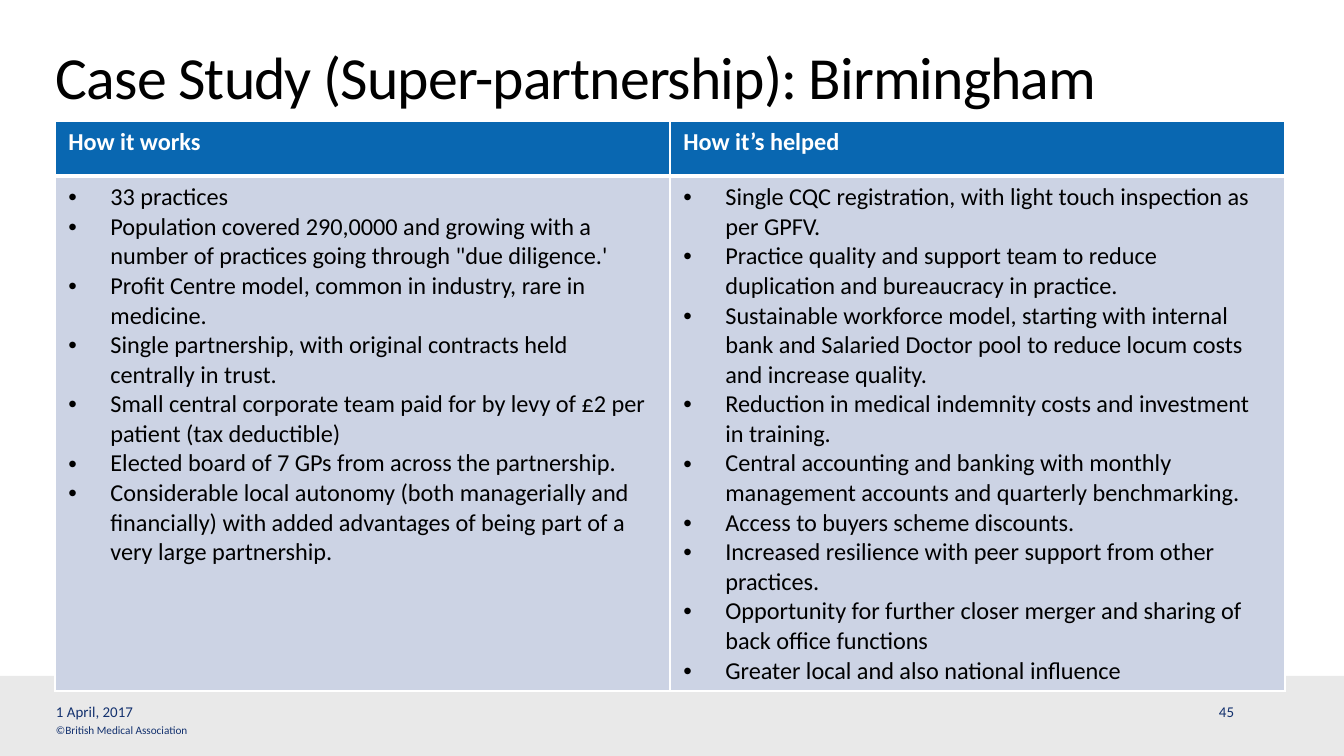
import pptx
import pptx.util
import pptx.dml.color
import pptx.enum.shapes
import pptx.enum.text
import pptx.oxml
import pptx.oxml.ns
from dataclasses import dataclass


@dataclass(frozen=True)
class Theme:
    font: str = "Calibri"
    ink: str = "000000"
    white: str = "FFFFFF"
    navy: str = "13316E"
    header: str = "0967B1"
    body: str = "CCD3E4"
    band: str = "E9E9E9"
    title_size: int = 32
    title_line: int = 34
    table_size: int = 13
    footer_size: int = 8
    copyright_size: int = 6
    thin: int = 1
    thick: int = 3


THEME = Theme()
EMU_PER_PX = 914400 / 134.4
SLIDE_WIDTH, SLIDE_HEIGHT = 1344, 756
BAND_TOP = 676
TABLE_LEFT, TABLE_TOP = 55, 121
COLUMN_WIDTH = 615
ROW_HEIGHTS = (55, 515)
BULLET_INDENT = 42

TITLE = "Case Study (Super-partnership): Birmingham"
TITLE_BOX = (56, 48, 1163, 73)
FOOTERS = [
    ("©British Medical Association", (56, 723, 278, 14), THEME.copyright_size),
    ("1 April, 2017", (56, 703, 426, 18), THEME.footer_size),
    ("45", (1219, 703, 38, 18), THEME.footer_size),
]
COLUMNS = [
    ("How it works", [
        "33 practices",
        "Population covered 290,0000 and growing with a number of practices going through \"due diligence.'",
        "Profit Centre model, common in industry, rare in medicine.",
        "Single partnership, with original contracts held centrally in trust.",
        "Small central corporate team paid for by levy of £2 per patient (tax deductible)",
        "Elected board of 7 GPs from across the partnership.",
        "Considerable local autonomy (both managerially and financially) with added advantages of being part of a very large partnership.",
    ]),
    ("How it’s helped", [
        "Single CQC registration, with light touch inspection as per GPFV.",
        "Practice quality and support team to reduce duplication and bureaucracy in practice.",
        "Sustainable workforce model, starting with internal bank and Salaried Doctor pool to reduce locum costs and increase quality.",
        "Reduction in medical indemnity costs and investment in training.",
        "Central accounting and banking with monthly management accounts and quarterly benchmarking.",
        "Access to buyers scheme discounts.",
        "Increased resilience with peer support from other practices.",
        "Opportunity for further closer merger and sharing of back office functions",
        "Greater local and also national influence",
    ]),
]


def px(value):
    return pptx.util.Emu(round(value * EMU_PER_PX))


def color(value):
    return pptx.dml.color.RGBColor.from_string(value)


def xml(tag, content="", **attributes):
    listed = "".join(f' {name}="{value}"' for name, value in attributes.items())
    namespace = pptx.oxml.ns.nsdecls("a")
    return pptx.oxml.parse_xml(f"<a:{tag} {namespace}{listed}>{content}</a:{tag}>")


def style(paragraph, size, ink, bold=False):
    for run in paragraph.runs:
        run.font.name = THEME.font
        run.font.size = pptx.util.Pt(size)
        run.font.color.rgb = color(ink)
        run.font.bold = bold


def add_text(slide, text, box, size, ink, anchor):
    text_frame = slide.shapes.add_textbox(*map(px, box)).text_frame
    text_frame.word_wrap = True
    text_frame.vertical_anchor = anchor
    text_frame.margin_left = text_frame.margin_right = 0
    text_frame.margin_top = text_frame.margin_bottom = 0
    text_frame.text = text
    paragraph = text_frame.paragraphs[0]
    style(paragraph, size, ink)
    return paragraph


def add_bullet(paragraph):
    properties = paragraph._p.get_or_add_pPr()
    properties.set("marL", str(px(BULLET_INDENT)))
    properties.set("indent", str(-px(BULLET_INDENT)))
    properties.append(xml("buFont", typeface="Arial"))
    properties.append(xml("buChar", char="•"))


def format_cell(cell, fill, top, bottom):
    cell.fill.solid()
    cell.fill.fore_color.rgb = color(fill)
    properties = cell._tc.get_or_add_tcPr()
    line_fill = f'<a:solidFill><a:srgbClr val="{THEME.white}"/></a:solidFill>'
    widths = {"lnL": THEME.thin, "lnR": THEME.thin, "lnT": top, "lnB": bottom}
    for position, (tag, width) in enumerate(widths.items()):
        properties.insert(position, xml(tag, line_fill, w=pptx.util.Pt(width)))


def add_table(slide):
    table = slide.shapes.add_table(
        len(ROW_HEIGHTS), len(COLUMNS), px(TABLE_LEFT), px(TABLE_TOP),
        px(COLUMN_WIDTH * len(COLUMNS)), px(sum(ROW_HEIGHTS)),
    ).table
    for row, height in zip(table.rows, ROW_HEIGHTS):
        row.height = px(height)
    for index, (heading, points) in enumerate(COLUMNS):
        table.columns[index].width = px(COLUMN_WIDTH)
        header, body = table.cell(0, index), table.cell(1, index)
        header.text_frame.text = heading
        style(header.text_frame.paragraphs[0], THEME.table_size, THEME.white, True)
        format_cell(header, THEME.header, THEME.thin, THEME.thick)
        body.text_frame.text = "\n".join(points)
        for paragraph in body.text_frame.paragraphs:
            add_bullet(paragraph)
            style(paragraph, THEME.table_size, THEME.ink)
        format_cell(body, THEME.body, THEME.thick, THEME.thin)


def main():
    presentation = pptx.Presentation()
    presentation.slide_width = px(SLIDE_WIDTH)
    presentation.slide_height = px(SLIDE_HEIGHT)
    slide = presentation.slides.add_slide(presentation.slide_layouts[6])

    band = slide.shapes.add_shape(
        pptx.enum.shapes.MSO_SHAPE.RECTANGLE,
        0, px(BAND_TOP), px(SLIDE_WIDTH), px(SLIDE_HEIGHT - BAND_TOP),
    )
    band.shadow.inherit = False
    band.fill.solid()
    band.fill.fore_color.rgb = color(THEME.band)
    band.line.fill.background()

    anchors = pptx.enum.text.MSO_ANCHOR
    title = add_text(slide, TITLE, TITLE_BOX, THEME.title_size, THEME.ink, anchors.TOP)
    title.line_spacing = pptx.util.Pt(THEME.title_line)
    title.runs[0]._r.get_or_add_rPr().set("spc", "-50")
    for text, box, size in FOOTERS:
        add_text(slide, text, box, size, THEME.navy, anchors.MIDDLE)
    add_table(slide)
    presentation.save("out.pptx")


if __name__ == "__main__":
    main()
